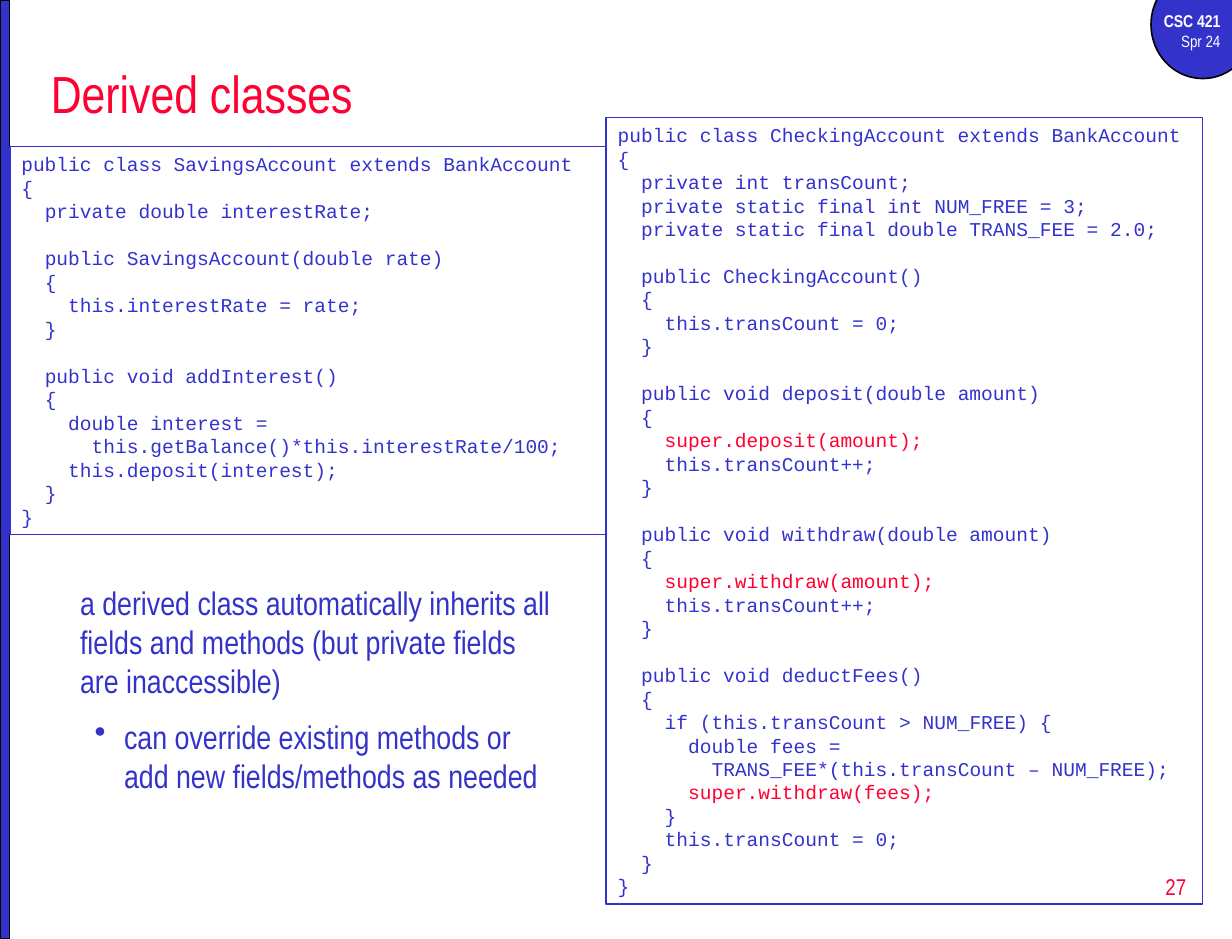
from pptx import Presentation
from pptx.dml.color import RGBColor
from pptx.enum.shapes import MSO_SHAPE
from pptx.enum.text import MSO_ANCHOR, MSO_AUTO_SIZE, PP_ALIGN
from pptx.util import Pt
from lxml import etree

BLUE = RGBColor(0x33, 0x33, 0xCC)
RED = RGBColor(0xFF, 0x00, 0x33)
WHITE = RGBColor(0xFF, 0xFF, 0xFF)
BLACK = RGBColor(0x00, 0x00, 0x00)
LEFT, RIGHT = PP_ALIGN.LEFT, PP_ALIGN.RIGHT
TOP, MIDDLE = MSO_ANCHOR.TOP, MSO_ANCHOR.MIDDLE
NO_FIT = MSO_AUTO_SIZE.NONE
RECT, OVAL = MSO_SHAPE.RECTANGLE, MSO_SHAPE.OVAL
NARROW, MONO = "Arial Narrow", "Courier New"
CODE_SIZE, CODE_PITCH, CHAR_WIDTH = 12, 14.4, 7.2

SAVINGS = """\
public class SavingsAccount extends BankAccount
{
  private double interestRate;

  public SavingsAccount(double rate)
  {
    this.interestRate = rate;
  }

  public void addInterest()
  {
    double interest =
      this.getBalance()*this.interestRate/100;
    this.deposit(interest);
  }
}"""

CHECKING = """\
public class CheckingAccount extends BankAccount
{
  private int transCount;
  private static final int NUM_FREE = 3;
  private static final double TRANS_FEE = 2.0;

  public CheckingAccount()
  {
    this.transCount = 0;
  }

  public void deposit(double amount)
  {
    super.deposit(amount);
    this.transCount++;
  }

  public void withdraw(double amount)
  {
    super.withdraw(amount);
    this.transCount++;
  }

  public void deductFees()
  {
    if (this.transCount > NUM_FREE) {
      double fees =
        TRANS_FEE*(this.transCount – NUM_FREE);
      super.withdraw(fees);
    }
    this.transCount = 0;
  }
}"""


def setup_frame(tf, anchor=TOP):
    frame_format = {"word_wrap": True, "auto_size": NO_FIT, "vertical_anchor": anchor,
                    "margin_left": Pt(7.2), "margin_right": Pt(7.2),
                    "margin_top": Pt(3.6), "margin_bottom": Pt(3.6)}
    for name, value in frame_format.items():
        setattr(tf, name, value)


def write_line(tf, text, size, color, font=NARROW, align=LEFT, bold=False):
    p = tf.paragraphs[0] if not tf.text else tf.add_paragraph()
    p.alignment = align
    r = p.add_run()
    r.text = text
    for name, value in {"name": font, "size": Pt(size), "bold": bold}.items():
        setattr(r.font, name, value)
    r.font.color.rgb = color
    return p


prs = Presentation()
prs.slide_width, prs.slide_height = Pt(756), Pt(576)
s = prs.slides.add_slide(prs.slide_layouts[5])

# Course badge and side bar
for kind, box in ((OVAL, (706.3, -18, 63.4, 66.2)), (RECT, (0, 0, 5.76, 576))):
    sp = s.shapes.add_shape(kind, *map(Pt, box))
    sp.shadow.inherit = False
    sp.fill.solid()
    sp.fill.fore_color.rgb = BLUE
    sp.line.color.rgb = BLACK
    sp.line.width = Pt(1)

tf = s.shapes.add_textbox(Pt(696.2), Pt(2.9), Pt(59.8), Pt(33)).text_frame
setup_frame(tf)
write_line(tf, "CSC 421", 10.5, WHITE, align=RIGHT, bold=True)
write_line(tf, "Spr 24", 10, WHITE, align=RIGHT)

# Title
title = s.shapes.title
title_box = {"left": 24, "top": 30, "width": 714, "height": 54}
for name, value in title_box.items():
    setattr(title, name, Pt(value))
setup_frame(title.text_frame, MIDDLE)
write_line(title.text_frame, "Derived classes", 32, RED)

# Code boxes: indents follow the source, blank lines become space before
for code, box in ((SAVINGS, (6, 90, 366, 238)), (CHECKING, (372, 72, 366, 482.4))):
    sp = s.shapes.add_shape(RECT, *map(Pt, box))
    sp.shadow.inherit = False
    sp.fill.background()
    sp.line.color.rgb = BLUE
    sp.line.width = Pt(1)
    tf = sp.text_frame
    setup_frame(tf)
    gap = 0
    for line in code.splitlines():
        statement = line.lstrip()
        if not statement:
            gap = CODE_PITCH
            continue
        color = RED if statement.startswith("super.") else BLUE
        p = write_line(tf, statement, CODE_SIZE, color, MONO)
        p.line_spacing, p.space_before = Pt(CODE_PITCH), Pt(gap)
        indent = (len(line) - len(statement)) * CHAR_WIDTH
        p._p.get_or_add_pPr().set("marL", str(Pt(indent)))
        gap = 0

# Notes on inheritance
tf = s.shapes.add_textbox(Pt(42), Pt(354), Pt(306), Pt(139)).text_frame
setup_frame(tf)
write_line(tf, "a derived class automatically inherits all fields and methods "
               "(but private fields are inaccessible)", 20, BLUE)
p = write_line(tf, "can override existing methods or add new fields/methods as needed",
               20, BLUE)
p.level, p.space_before = 1, Pt(10)
pPr = p._p.get_or_add_pPr()
pPr.set("marL", str(Pt(27)))
pPr.set("indent", str(Pt(-18)))
bullet = etree.SubElement(pPr, "{http://schemas.openxmlformats.org/drawingml/2006/main}buChar")
bullet.set("char", "•")

# Slide number
tf = s.shapes.add_textbox(Pt(577.4), Pt(525), Pt(157.7), Pt(38)).text_frame
setup_frame(tf, MIDDLE)
write_line(tf, "27", 14, RED, align=RIGHT)

prs.save("out.pptx")
